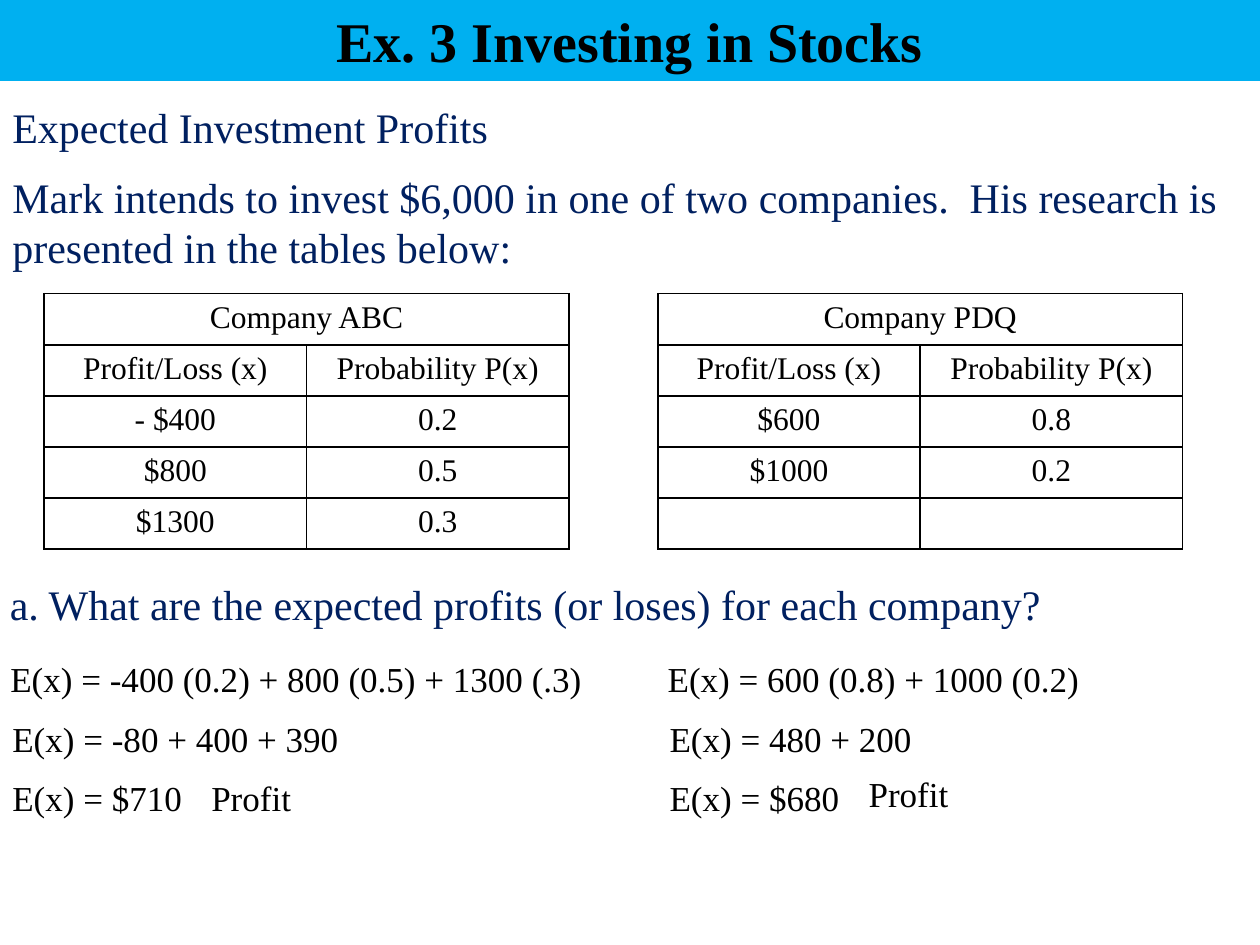
from lxml import etree
from pptx import Presentation
from pptx import util as u
from pptx.dml import color
from pptx.enum import text
from pptx.oxml import ns

FONT = "Times New Roman"
BLACK, NAVY, SKY = "000000", "002060", "00B0F0"
HEADINGS = ("Profit/Loss (x)", "Probability P(x)")
ABC = [("- $400", "0.2"), ("$800", "0.5"), ("$1300", "0.3")]
PDQ = [("$600", "0.8"), ("$1000", "0.2"), ("", "")]
ABC_WORK = ("E(x) = -400 (0.2) + 800 (0.5) + 1300 (.3)",
            "E(x) = -80 + 400 + 390", "E(x) = $710")
PDQ_WORK = ("E(x) = 600 (0.8) + 1000 (0.2)", "E(x) = 480 + 200", "E(x) = $680")


def rgb(value):
    """Return the colour for a hex string."""
    return color.RGBColor.from_string(value)


def add_run(paragraph, words, size, ink, bold=False):
    """Add one formatted run to a paragraph."""
    run = paragraph.add_run()
    run.text = words
    run.font.name = FONT
    run.font.size = u.Pt(size)
    run.font.bold = bold
    run.font.color.rgb = rgb(ink)


def add_title(slide, words, width, height):
    """Turn the title placeholder into a coloured band across the top."""
    title = slide.shapes.title
    title.left, title.top = u.Cm(0), u.Cm(0)
    title.width, title.height = u.Cm(width), u.Cm(height)
    title.fill.solid()
    title.fill.fore_color.rgb = rgb(SKY)
    frame = title.text_frame
    frame.auto_size = text.MSO_AUTO_SIZE.NONE
    frame.vertical_anchor = text.MSO_ANCHOR.TOP
    paragraph = frame.paragraphs[0]
    paragraph.alignment = text.PP_ALIGN.CENTER
    add_run(paragraph, words, 32, BLACK, bold=True)


def add_text(slide, words, left, top, width, height, size=20, ink=BLACK):
    """Add a wrapping text box with one line of thought."""
    box = slide.shapes.add_textbox(u.Cm(left), u.Cm(top), u.Cm(width), u.Cm(height))
    frame = box.text_frame
    frame.word_wrap = True
    frame.auto_size = text.MSO_AUTO_SIZE.SHAPE_TO_FIT_TEXT
    add_run(frame.paragraphs[0], words, size, ink)


def style_cell(cell):
    """Clear the cell's fill and give it thin black borders."""
    cell.fill.background()
    properties = cell.fill._xPr
    for index, side in enumerate(("lnL", "lnR", "lnT", "lnB")):
        line = etree.Element(ns.qn(f"a:{side}"), w=str(u.Pt(1)))
        fill = etree.SubElement(line, ns.qn("a:solidFill"))
        etree.SubElement(fill, ns.qn("a:srgbClr"), val=BLACK)
        properties.insert(index, line)


def add_profit_table(slide, company, outcomes, left, top, width, height):
    """Add a company's profit distribution under a merged heading."""
    rows = [(company, ""), HEADINGS, *outcomes]
    table = slide.shapes.add_table(len(rows), 2, u.Cm(left), u.Cm(top),
                                   u.Cm(width), u.Cm(height)).table
    table.first_row = table.horz_banding = False
    table.cell(0, 0).merge(table.cell(0, 1))
    for row, values in enumerate(rows):
        for column, words in enumerate(values):
            cell = table.cell(row, column)
            style_cell(cell)
            if words:
                paragraph = cell.text_frame.paragraphs[0]
                paragraph.alignment = text.PP_ALIGN.CENTER
                add_run(paragraph, words, 18, BLACK)


def add_working(slide, steps, left, top, verdict_rise=0):
    """Stack the steps of an expected value and set the verdict by the last."""
    pitch, height = 1.2, 1.11
    widths, shifts = (12.09, 9.32, 4.01), (-0.04, 0, 0)
    for index, (words, width, shift) in enumerate(zip(steps, widths, shifts)):
        add_text(slide, words, left + shift, top + index * pitch, width, height)
    add_text(slide, "Profit", left + widths[-1],
             top + 2 * pitch - verdict_rise, 4.01, height)


def main():
    """Build and save the slide."""
    presentation = Presentation()
    width = 25.4
    presentation.slide_width, presentation.slide_height = u.Cm(width), u.Cm(19.05)
    slide = presentation.slides.add_slide(presentation.slide_layouts[5])
    add_title(slide, "Ex. 3 Investing in Stocks", width, 1.63)
    for words, left, top, height in (
        ("Expected Investment Profits", 0, 1.93, 1.28),
        ("Mark intends to invest $6,000 in one of two companies.  His research is "
         "presented in the tables below:", 0, 3.33, 2.31),
        ("a. What are the expected profits (or loses) for each company?",
         -0.05, 11.54, 1.28),
    ):
        add_text(slide, words, left, top, width, height, 24, NAVY)
    add_profit_table(slide, "Company ABC", ABC, 0.89, 5.92, 10.58, 5.15)
    add_profit_table(slide, "Company PDQ", PDQ, 13.26, 5.92, 10.58, 5.15)
    add_working(slide, ABC_WORK, 0, 13.13)
    add_working(slide, PDQ_WORK, 13.25, 13.13, verdict_rise=0.08)
    presentation.save("out.pptx")


if __name__ == "__main__":
    main()
